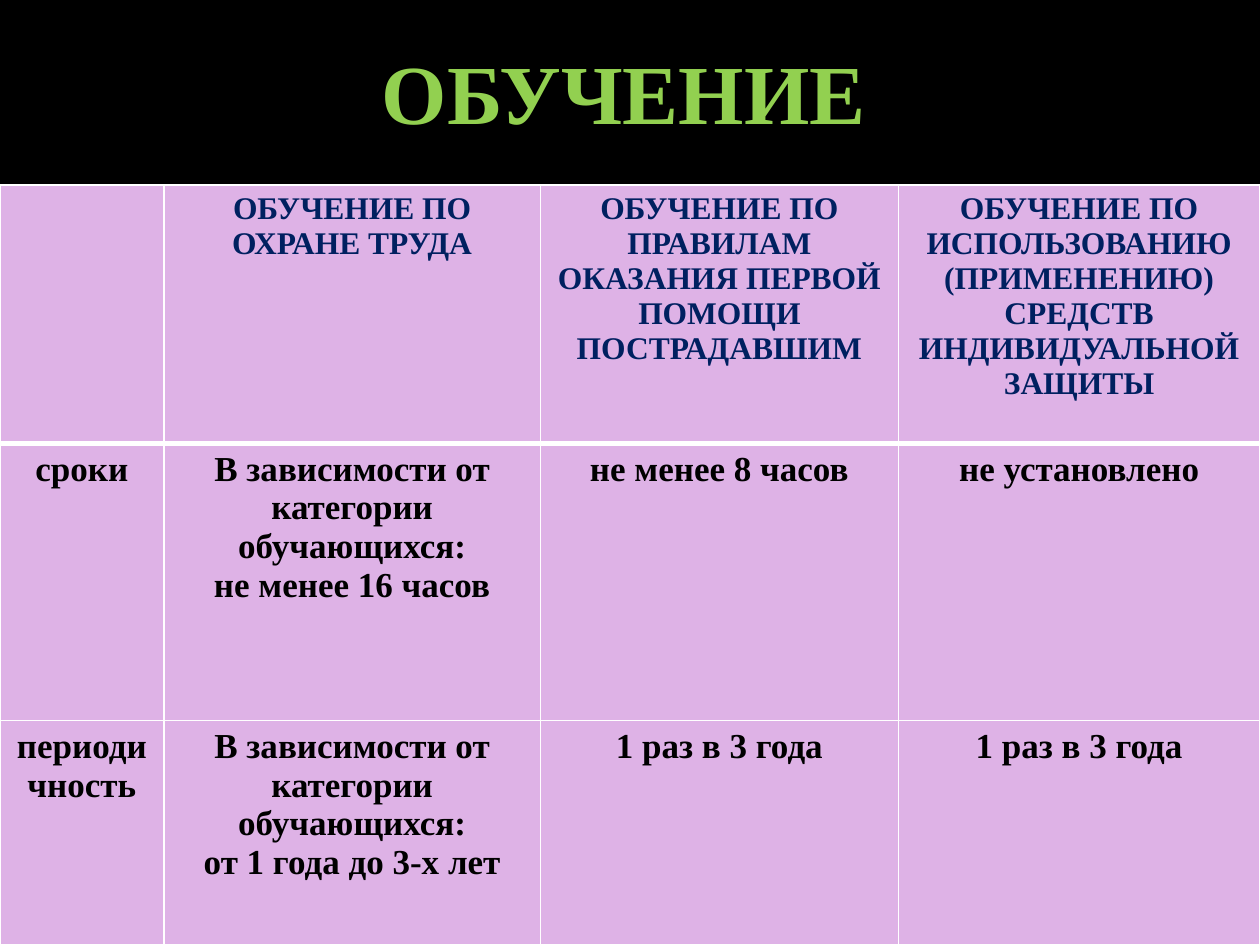
from lxml import etree
from pptx import Presentation
from pptx.dml.color import RGBColor
from pptx.enum.text import MSO_ANCHOR, PP_ALIGN
from pptx.oxml.ns import qn
from pptx.util import Inches, Pt

CENTER = PP_ALIGN.CENTER
MIDDLE = MSO_ANCHOR.MIDDLE

THEME = {
    "font": "Times New Roman",
    "background": "000000",
    "cell": "DEB2E6",
    "border": "FFFFFF",
    "title": {"size": 48, "color": "92D050"},
    "title_end": {"size": 28, "color": "FFFFFF"},
    "header": {"size": 18, "color": "002060"},
    "body": {"size": 20, "color": "000000"},
}
COLUMNS = [1.3, 2.99, 2.84, 2.87]
ROWS = [2.05, 2.2, 1.78]
TABLE_TOP = 1.47
THIN, THICK = 1, 3

CATEGORY = "В зависимости от категории обучающихся:"
TRAINING = [
    [
        "",
        "ОБУЧЕНИЕ ПО ОХРАНЕ ТРУДА",
        "ОБУЧЕНИЕ ПО ПРАВИЛАМ ОКАЗАНИЯ ПЕРВОЙ ПОМОЩИ ПОСТРАДАВШИМ",
        "ОБУЧЕНИЕ ПО ИСПОЛЬЗОВАНИЮ (ПРИМЕНЕНИЮ) СРЕДСТВ ИНДИВИДУАЛЬНОЙ ЗАЩИТЫ",
    ],
    ["сроки", f"{CATEGORY}\nне менее 16 часов", "не менее 8 часов", "не установлено"],
    ["периодичность", f"{CATEGORY}\nот 1 года до 3-х лет", "1 раз в 3 года", "1 раз в 3 года"],
]


def write(paragraph, text, style):
    paragraph.alignment = CENTER
    run = paragraph.add_run()
    run.text = text
    formats = {"name": THEME["font"], "size": Pt(style["size"]), "bold": True}
    for attribute, value in formats.items():
        setattr(run.font, attribute, value)
    run.font.color.rgb = RGBColor.from_string(style["color"])


def add_borders(cell, widths):
    """Draw the cell's sides; widths maps L, R, T, B in that order to points."""
    properties = cell._tc.get_or_add_tcPr()
    for side, width in widths.items():
        line = etree.SubElement(properties, qn(f"a:ln{side}"), w=str(Pt(width)))
        fill = etree.SubElement(line, qn("a:solidFill"))
        etree.SubElement(fill, qn("a:srgbClr"), val=THEME["border"])


presentation = Presentation()
presentation.slide_width = Inches(10)
presentation.slide_height = Inches(7.5)
slide = presentation.slides.add_slide(presentation.slide_layouts[6])
slide.background.fill.solid()
slide.background.fill.fore_color.rgb = RGBColor.from_string(THEME["background"])

title = slide.shapes.add_textbox(Inches(0.5), Inches(0.21), Inches(9), Inches(1.02)).text_frame
title.word_wrap = True
title.vertical_anchor = MIDDLE
write(title.paragraphs[0], "ОБУЧЕНИЕ", THEME["title"])
write(title.paragraphs[0], " ", THEME["title_end"])

table = slide.shapes.add_table(
    len(ROWS), len(COLUMNS), 0, Inches(TABLE_TOP), Inches(sum(COLUMNS)), Inches(sum(ROWS))
).table
for column, width in zip(table.columns, COLUMNS):
    column.width = Inches(width)
for row, height in zip(table.rows, ROWS):
    row.height = Inches(height)

for row_index, texts in enumerate(TRAINING):
    style = THEME["header" if row_index == 0 else "body"]
    top = THICK if row_index == 1 else THIN
    bottom = THICK if row_index == 0 else THIN
    for column_index, text in enumerate(texts):
        cell = table.cell(row_index, column_index)
        add_borders(cell, {"L": THIN, "R": THIN, "T": top, "B": bottom})
        cell.fill.solid()
        cell.fill.fore_color.rgb = RGBColor.from_string(THEME["cell"])
        if not text:
            continue
        frame = cell.text_frame
        for line_index, line in enumerate(text.split("\n")):
            paragraph = frame.add_paragraph() if line_index else frame.paragraphs[0]
            write(paragraph, line, style)

presentation.save("out.pptx")
